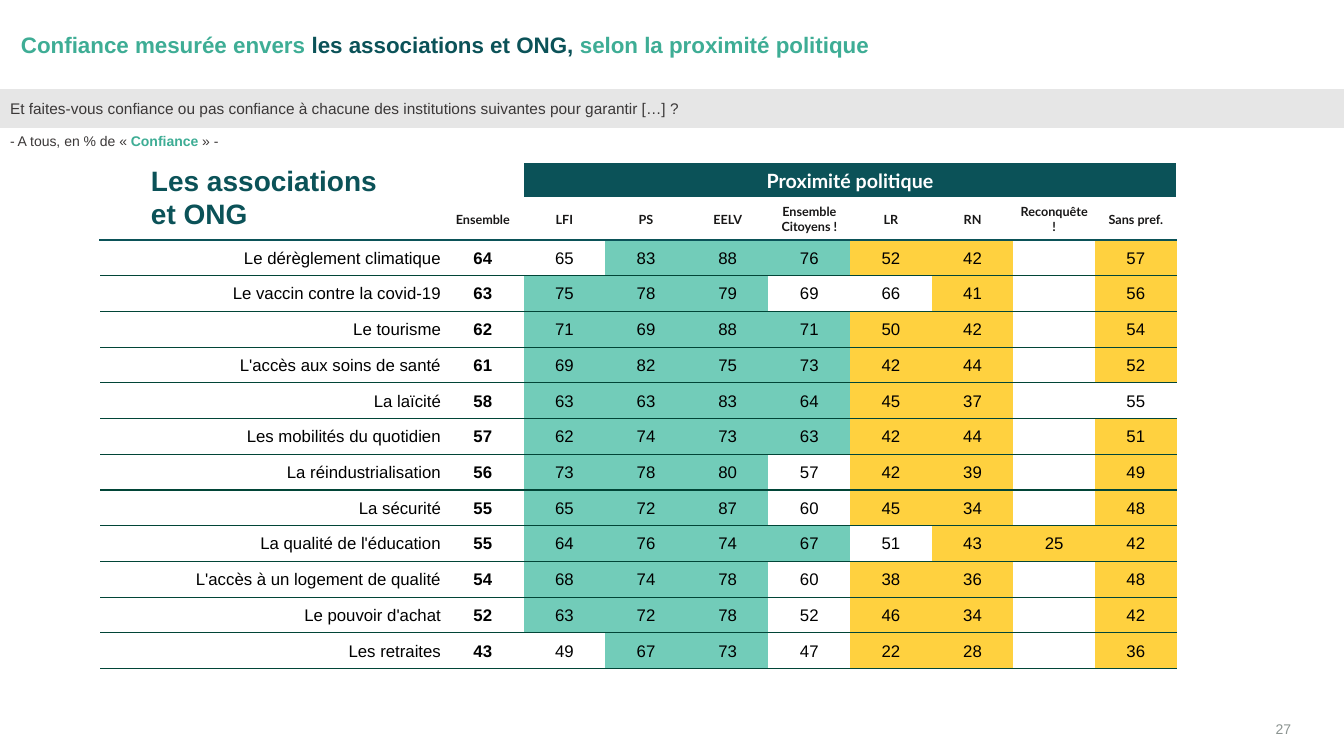
from pptx import Presentation
from pptx.dml.color import RGBColor
from pptx.enum.shapes import MSO_SHAPE
from pptx.enum.text import MSO_ANCHOR as ANCHOR, MSO_AUTO_SIZE as AUTO, PP_ALIGN as ALIGN
from pptx.oxml import parse_xml
from pptx.oxml.ns import nsdecls, qn
from pptx.util import Emu, Pt

GREEN, TEAL, GREY = "3EAD95", "0B5258", "3B3838"
WHITE, RULE, BLACK = "FFFFFF", "014537", "000000"
MARK_FILLS = {"+": "72CCB9", "-": "FFD13F"}
NO_STYLE = "{2D5ABB26-0587-4C30-8999-92F81FD0307C}"
hex_color = RGBColor.from_string


def px(length):
    return Emu(round(length * 914400 / 100.8))


def write(frame, runs, size, align, anchor, margins, font="Arial"):
    """Fill a text frame or table cell with one paragraph of (text, colour, bold) runs.

    Margins are left, top, right and bottom, in px.
    """
    frame.margin_left, frame.margin_top, frame.margin_right, frame.margin_bottom = map(px, margins)
    frame.vertical_anchor = anchor
    paragraph = getattr(frame, "text_frame", frame).paragraphs[0]
    paragraph.alignment = align
    for text, color, bold in runs:
        run = paragraph.add_run()
        run.text = text
        run.font.name, run.font.size, run.font.bold = font, Pt(size), bold
        run.font.color.rgb = hex_color(color)


deck = Presentation()
deck.slide_width, deck.slide_height = px(1344), px(756)
slide = deck.slides.add_slide(deck.slide_layouts[5])

# Title and question
title = slide.shapes.title
title.left, title.top, title.width, title.height = px(11), px(9), px(1306), px(72)
title.text_frame.auto_size = AUTO.NONE
write(title.text_frame, [
    ("Confiance mesurée envers ", GREEN, True),
    ("les associations et ONG, ", TEAL, True),
    ("selon la proximité politique", GREEN, True),
], 16, ALIGN.LEFT, ANCHOR.MIDDLE, (10, 0, 0, 0))

question = slide.shapes.add_shape(MSO_SHAPE.RECTANGLE, 0, px(89), px(1344), px(39))
question.shadow.inherit = False
question.fill.solid()
question.fill.fore_color.rgb = hex_color("E6E6E6")
question.line.fill.background()
write(question.text_frame, [
    ("Et faites-vous confiance ou pas confiance à chacune des institutions "
     "suivantes pour garantir […] ?", GREY, False),
], 11, ALIGN.JUSTIFY, ANCHOR.MIDDLE, (10, 10, 20, 10))

base = slide.shapes.add_textbox(0, px(128), px(1344), px(24)).text_frame
base.word_wrap = True
write(base, [
    ("- A tous, en % de « ", GREY, False),
    ("Confiance", GREEN, True),
    (" » -", GREY, False),
], 10, ALIGN.LEFT, ANCHOR.TOP, (10, 5, 10, 5))

# Table: + marks scores in green, - marks scores in yellow, . is an empty cell
parties = ["Ensemble", "LFI", "PS", "EELV", "Ensemble Citoyens !", "LR", "RN",
           "Reconquête !", "Sans pref."]
topics = [
    ("Le dérèglement climatique", "64 65 83+ 88+ 76+ 52- 42- . 57-"),
    ("Le vaccin contre la covid-19", "63 75+ 78+ 79+ 69 66 41- . 56-"),
    ("Le tourisme", "62 71+ 69+ 88+ 71+ 50- 42- . 54-"),
    ("L'accès aux soins de santé", "61 69+ 82+ 75+ 73+ 42- 44- . 52-"),
    ("La laïcité", "58 63+ 63+ 83+ 64+ 45- 37- . 55"),
    ("Les mobilités du quotidien", "57 62+ 74+ 73+ 63+ 42- 44- . 51-"),
    ("La réindustrialisation", "56 73+ 78+ 80+ 57 42- 39- . 49-"),
    ("La sécurité", "55 65+ 72+ 87+ 60 45- 34- . 48-"),
    ("La qualité de l'éducation", "55 64+ 76+ 74+ 67+ 51 43- 25- 42-"),
    ("L'accès à un logement de qualité", "54 68+ 74+ 78+ 60 38- 36- . 48-"),
    ("Le pouvoir d'achat", "52 63+ 72+ 78+ 52 46- 34- . 42-"),
    ("Les retraites", "43 49 67+ 73+ 47 22- 28- . 36-"),
]
table = slide.shapes.add_table(len(topics) + 2, len(parties) + 1,
                               px(100), px(162), px(1077), px(507)).table
table.first_row = table.horz_banding = False
table._tbl.tblPr.find(qn("a:tableStyleId")).text = NO_STYLE
for index, column in enumerate(table.columns):
    column.width = px(735) // len(parties) if index else px(342)
for index, row in enumerate(table.rows):
    row.height = (px(37), px(41))[index] if index < 2 else px(429) // len(topics)

rules = [(WHITE, 1), (WHITE, 3), (TEAL, 1)] + [(RULE, 1)] * len(topics)
for row_index, row in enumerate(table.rows):
    for cell in row.cells:
        edges = {"lnT": rules[row_index], "lnB": rules[row_index + 1]}
        if row_index < 2:
            edges = {"lnL": (WHITE, 1), "lnR": (WHITE, 1), **edges}
        cell.margin_left = cell.margin_top = cell.margin_right = cell.margin_bottom = px(1)
        for edge, (color, points) in edges.items():
            cell._tc.get_or_add_tcPr().append(parse_xml(
                f'<a:{edge} {nsdecls("a")} w="{Pt(points)}"><a:solidFill>'
                f'<a:srgbClr val="{color}"/></a:solidFill></a:{edge}>'))
        cell.fill.background()

proximity = table.cell(0, 2)
proximity.merge(table.cell(0, len(parties)))
proximity.fill.solid()
proximity.fill.fore_color.rgb = hex_color(TEAL)
write(proximity, [("Proximité politique", WHITE, True)], 14, ALIGN.CENTER, ANCHOR.MIDDLE,
      (10, 5, 10, 5), "Lato")

for column, party in enumerate(parties, 1):
    write(table.cell(1, column), [(party, "181717", True)], 9, ALIGN.CENTER, ANCHOR.MIDDLE,
          (5, 5, 5, 5), "Lato")

for row, (topic, scores) in enumerate(topics, 2):
    write(table.cell(row, 0), [(topic, BLACK, False)], 12, ALIGN.RIGHT, ANCHOR.MIDDLE,
          (1, 1, 1, 0))
    for column, score in enumerate(scores.split(), 1):
        if score == ".":
            continue
        cell = table.cell(row, column)
        write(cell, [(score[:2], BLACK, column == 1)], 12, ALIGN.CENTER, ANCHOR.MIDDLE,
              (1, 1, 1, 0))
        if score[2:]:
            cell.fill.solid()
            cell.fill.fore_color.rgb = hex_color(MARK_FILLS[score[2:]])

# Table heading and page number
heading = slide.shapes.add_textbox(px(151), px(163), px(250), px(68)).text_frame
heading.word_wrap = True
heading.auto_size = AUTO.SHAPE_TO_FIT_TEXT
write(heading, [("Les associations et ONG", TEAL, True)], 20, ALIGN.LEFT, ANCHOR.TOP,
      (0, 0, 0, 0))

page = slide.shapes.add_textbox(px(1232), px(713), px(59), px(24)).text_frame
page.word_wrap = True
write(page, [("27", "8C9491", False)], 10, ALIGN.RIGHT, ANCHOR.BOTTOM, (0, 0, 0, 0))

deck.save("out.pptx")
